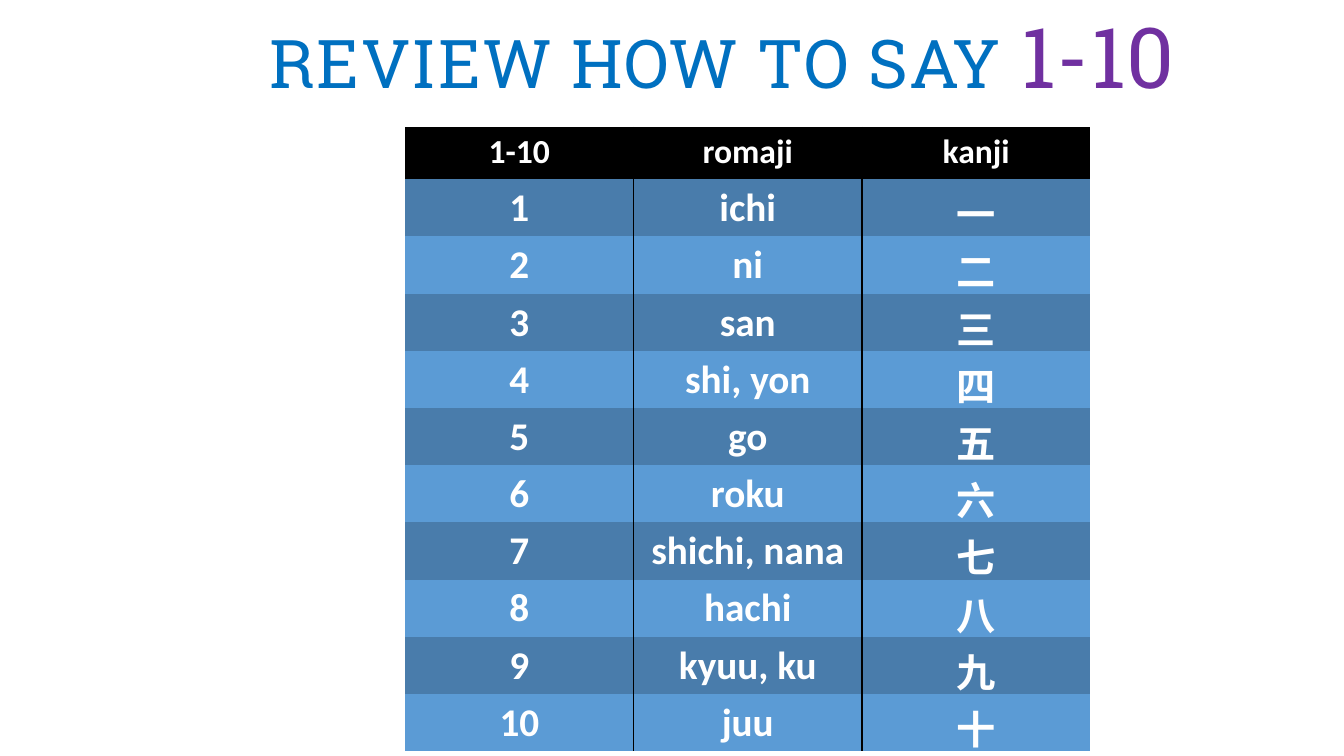
from lxml import etree
from pptx import Presentation
from pptx.dml.color import RGBColor
from pptx.enum import text as txt
from pptx.oxml import ns
from pptx.util import Cm, Pt

COLORS = {
    "title": "0070C0",
    "range": "7030A0",
    "header": "000000",
    "odd": "497CAB",
    "even": "5B9BD5",
    "rule": "000000",
    "cell_text": "FFFFFF",
}
NO_STYLE = "{2D5ABB26-0587-4C30-8999-92F81FD0307C}"

HEADINGS = ("1-10", "romaji", "kanji")
NUMBERS = (
    ("ichi", "一"),
    ("ni", "二"),
    ("san", "三"),
    ("shi, yon", "四"),
    ("go", "五"),
    ("roku", "六"),
    ("shichi, nana", "七"),
    ("hachi", "八"),
    ("kyuu, ku", "九"),
    ("juu", "十"),
)


def add_text(paragraph, content, *, size, color, font, bold=False, spacing=None):
    run = paragraph.add_run()
    run.text = content
    run.font.size = Pt(size)
    run.font.name = font
    run.font.bold = bold
    run.font.color.rgb = RGBColor.from_string(COLORS[color])
    if spacing:
        run.font._element.set("spc", str(int(spacing * 100)))


def add_rule(cell, side):
    """Draw a 1 pt line on one side ("L" or "R") of a cell."""
    line = etree.SubElement(cell._tc.get_or_add_tcPr(), ns.qn(f"a:ln{side}"), w=str(Pt(1)))
    fill = etree.SubElement(line, ns.qn("a:solidFill"))
    etree.SubElement(fill, ns.qn("a:srgbClr"), val=COLORS["rule"])


def add_title(slide, left, top, width, height):
    frame = slide.shapes.add_textbox(left, top, width, height).text_frame
    frame.word_wrap = False
    frame.auto_size = txt.MSO_AUTO_SIZE.SHAPE_TO_FIT_TEXT
    heading = frame.paragraphs[0]
    style = {"font": "Roboto Slab", "spacing": 1}
    add_text(heading, "REVIEW HOW TO SAY ", size=48, color="title", **style)
    add_text(heading, "1-10", size=60, color="range", **style)


def add_number_table(slide, left, top, width, height):
    rows = [HEADINGS]
    rows += [(str(n), *words) for n, words in enumerate(NUMBERS, 1)]
    last = len(HEADINGS) - 1
    table = slide.shapes.add_table(
        len(rows), len(HEADINGS), left, top, width, height).table
    table.first_row = table.horz_banding = False
    table._tbl.tblPr.find(ns.qn("a:tableStyleId")).text = NO_STYLE

    for r, row in enumerate(rows):
        band = "header" if r == 0 else ("even", "odd")[r % 2]
        for c, content in enumerate(row):
            cell = table.cell(r, c)
            # Inner column rules come before the fill
            if c > 0:
                add_rule(cell, "L")
            if c < last:
                add_rule(cell, "R")
            cell.fill.solid()
            cell.fill.fore_color.rgb = RGBColor.from_string(COLORS[band])
            paragraph = cell.text_frame.paragraphs[0]
            paragraph.alignment = txt.PP_ALIGN.CENTER
            add_text(paragraph, content, size=24 if r == 0 else 28,
                     color="cell_text", font="Calibri", bold=True)


def main():
    deck = Presentation()
    deck.slide_width, deck.slide_height = Cm(33.87), Cm(19.05)
    slide = deck.slides.add_slide(deck.slide_layouts[6])
    add_title(slide, Cm(6.55), Cm(0), Cm(25.58), Cm(2.82))
    add_number_table(slide, Cm(10.21), Cm(3.2), Cm(17.27), Cm(14.5))
    deck.save("out.pptx")


if __name__ == "__main__":
    main()
